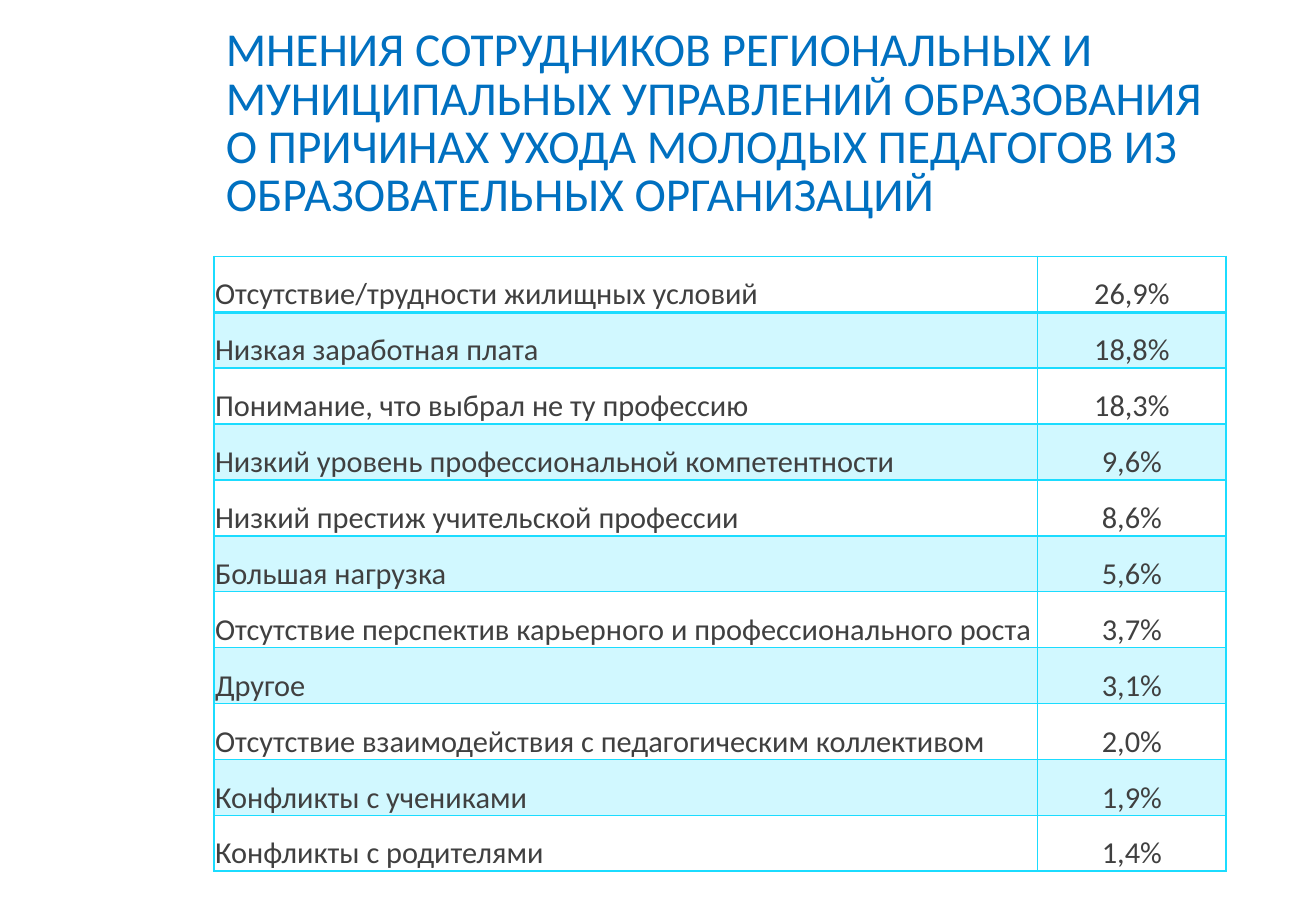
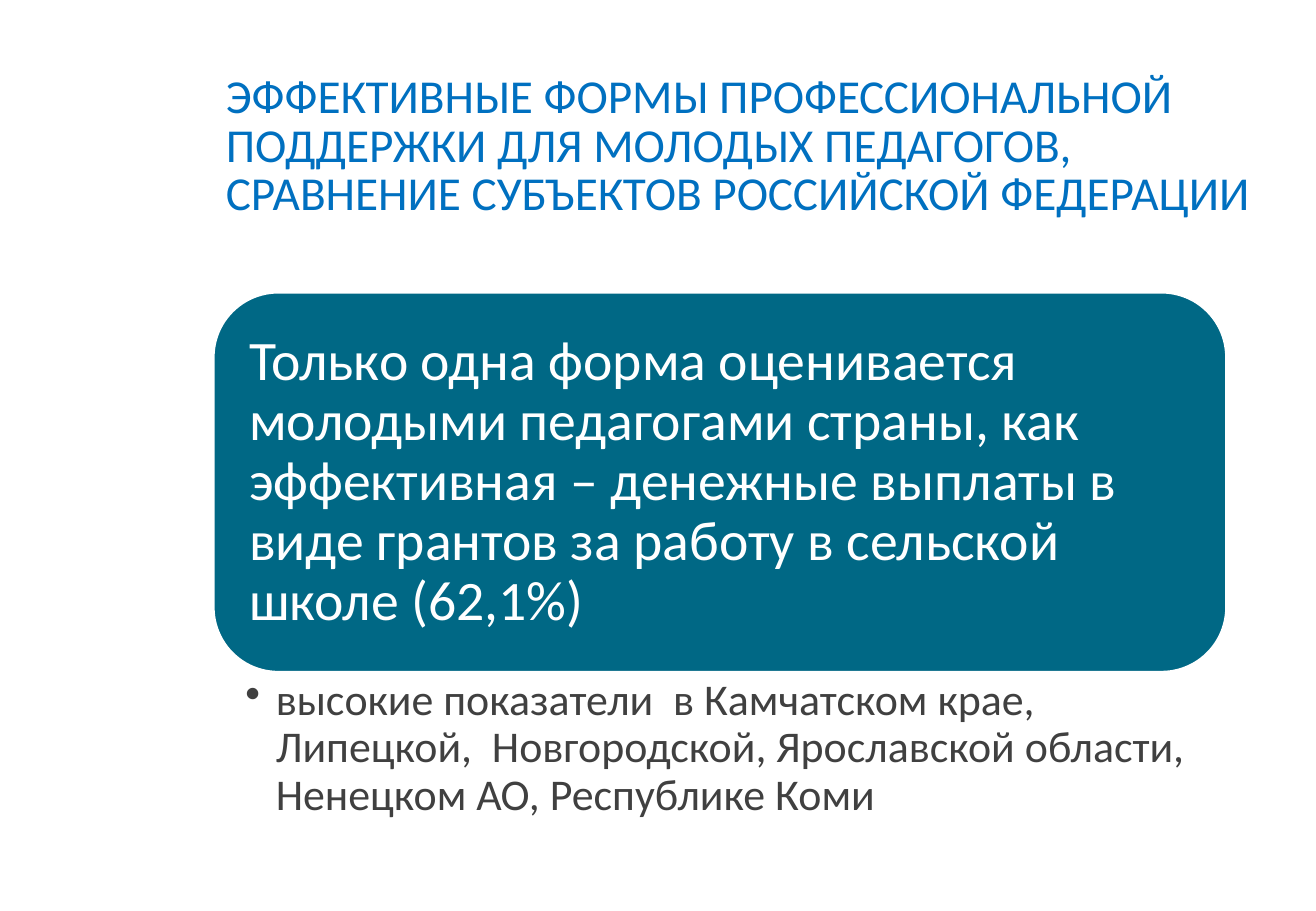
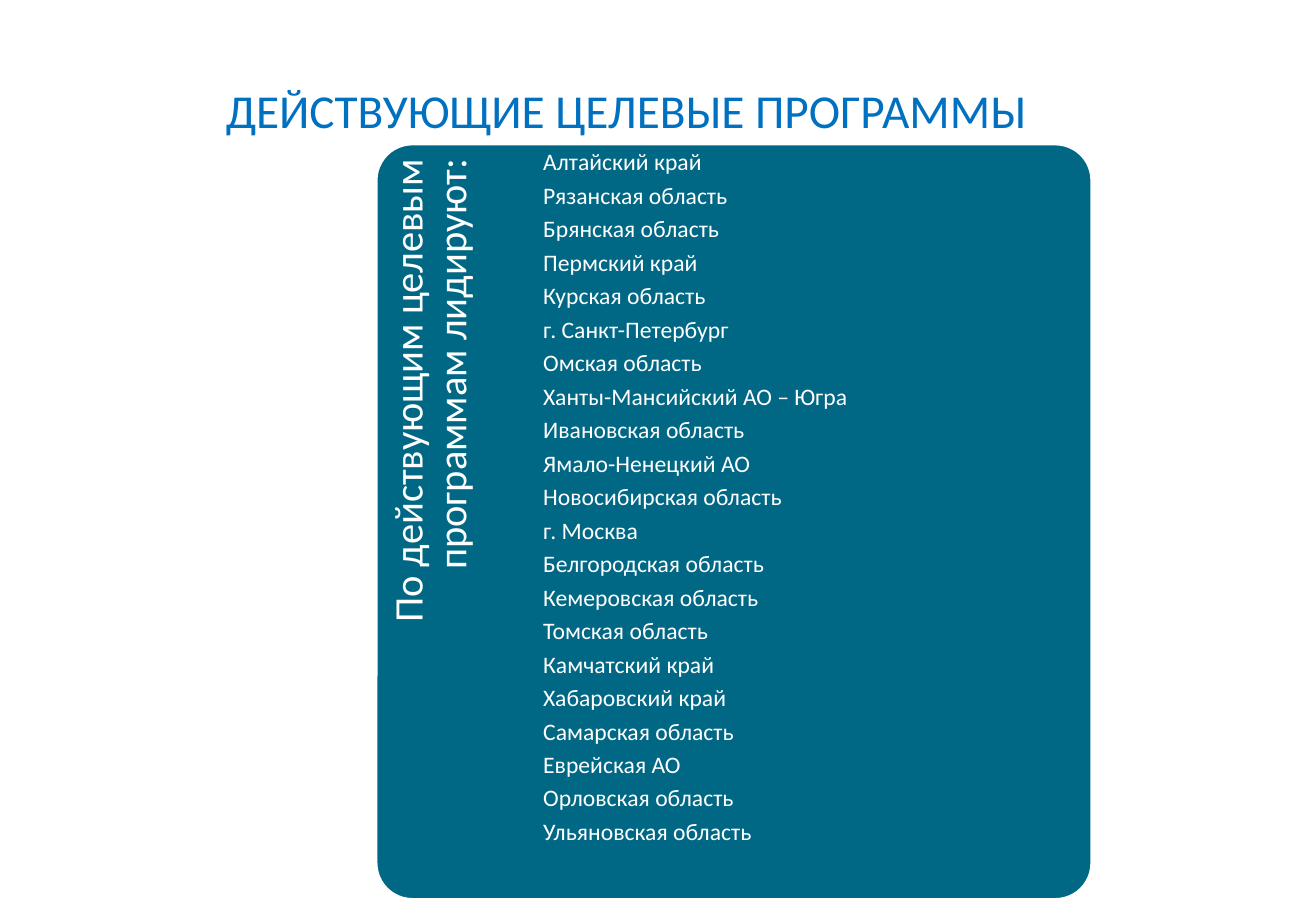
import pptx
import pptx.dml.color
import pptx.enum.shapes
import pptx.enum.text
import pptx.oxml.ns
import pptx.util
from lxml import etree

Inches = pptx.util.Inches
Pt = pptx.util.Pt
ALIGN = pptx.enum.text.PP_ALIGN
ANCHOR = pptx.enum.text.MSO_ANCHOR
qn = pptx.oxml.ns.qn

FONT = "Calibri"
BLUE = "0070C0"
TEAL = "006885"
CYAN = "1BDCFF"
GREY = "404040"
WHITE = "FFFFFF"
LEFT = 1.76
WIDTH = 8.33

REASONS = [
    ("Отсутствие/трудности жилищных условий", "26,9%"),
    ("Низкая заработная плата", "18,8%"),
    ("Понимание, что выбрал не ту профессию", "18,3%"),
    ("Низкий уровень профессиональной компетентности", "9,6%"),
    ("Низкий престиж учительской профессии", "8,6%"),
    ("Большая нагрузка", "5,6%"),
    ("Отсутствие перспектив карьерного и профессионального роста", "3,7%"),
    ("Другое", "3,1%"),
    ("Отсутствие взаимодействия с педагогическим коллективом", "2,0%"),
    ("Конфликты с учениками", "1,9%"),
    ("Конфликты с родителями", "1,4%"),
]

REGIONS = [
    "Алтайский край", "Рязанская область", "Брянская область", "Пермский край",
    "Курская область", "г. Санкт-Петербург", "Омская область",
    "Ханты-Мансийский АО – Югра", "Ивановская область", "Ямало-Ненецкий АО",
    "Новосибирская область", "г. Москва", "Белгородская область",
    "Кемеровская область", "Томская область", "Камчатский край",
    "Хабаровский край", "Самарская область", "Еврейская АО",
    "Орловская область", "Ульяновская область",
]


def color(value):
    return pptx.dml.color.RGBColor.from_string(value)


def place(box):
    return [Inches(length) for length in box]


def write_text(frame, text, size, ink, align=ALIGN.LEFT, spacing=0.9, after=0, bullet=None):
    lines = [text] if isinstance(text, str) else text
    for index, line in enumerate(lines):
        paragraph = frame.paragraphs[0] if index == 0 else frame.add_paragraph()
        paragraph.text = line
        paragraph.alignment = align
        paragraph.line_spacing = spacing
        paragraph.space_after = Pt(after)
        if bullet:
            properties = paragraph._p.get_or_add_pPr()
            properties.set("marL", str(Inches(0.25)))
            properties.set("indent", str(Inches(-0.25)))
            etree.SubElement(properties, qn("a:buChar"), char=bullet)
        for run in paragraph.runs:
            run.font.name = FONT
            run.font.size = Pt(size)
            run.font.color.rgb = color(ink)


def add_text(slide, box, text, insets=(0.1, 0.05, 0.1, 0.05), anchor=ANCHOR.TOP, **text_format):
    shape = slide.shapes.add_textbox(*place(box))
    frame = shape.text_frame
    frame.word_wrap = True
    frame.vertical_anchor = anchor
    (frame.margin_left, frame.margin_top,
     frame.margin_right, frame.margin_bottom) = place(insets)
    write_text(frame, text, **text_format)
    return shape


def add_title(slide, box, text):
    add_text(slide, box, text, anchor=ANCHOR.BOTTOM, size=28, ink=BLUE, spacing=0.85)


def add_panel(slide, box, rounding):
    shape = slide.shapes.add_shape(
        pptx.enum.shapes.MSO_SHAPE.ROUNDED_RECTANGLE, *place(box))
    shape.adjustments[0] = rounding
    shape.shadow.inherit = False
    shape.fill.solid()
    shape.fill.fore_color.rgb = color(TEAL)
    shape.line.color.rgb = color(WHITE)
    shape.line.width = Pt(1)


def set_borders(cell, **widths):
    properties = cell._tc.get_or_add_tcPr()
    for side in "LRTB":
        line = etree.SubElement(
            properties, qn("a:ln" + side), w=str(Pt(widths.get(side, 1))))
        fill = etree.SubElement(line, qn("a:solidFill"))
        etree.SubElement(fill, qn("a:srgbClr"), val=CYAN)


def tint(cell, opacity):
    cell.fill.solid()
    cell.fill.fore_color.rgb = color(CYAN)
    tone = cell._tc.tcPr.find(qn("a:solidFill")).find(qn("a:srgbClr"))
    etree.SubElement(tone, qn("a:alpha"), val=str(opacity * 1000))


def add_reason_table(slide, box, rows):
    value_width = 1.55
    table = slide.shapes.add_table(len(rows), 2, *place(box)).table
    table.first_row = False
    table.horz_banding = False
    table.columns[0].width = Inches(box[2] - value_width)
    table.columns[1].width = Inches(value_width)
    for row_index, row in enumerate(rows):
        for column_index, text in enumerate(row):
            cell = table.cell(row_index, column_index)
            cell.vertical_anchor = ANCHOR.MIDDLE
            cell.margin_left = cell.margin_top = cell.margin_right = Inches(0.01)
            cell.margin_bottom = 0
            write_text(cell.text_frame, text, size=18, ink=GREY, spacing=1.5,
                       align=ALIGN.CENTER if column_index else ALIGN.LEFT)
            set_borders(cell, T=2 if row_index == 1 else 1, B=2 if row_index == 0 else 1)
            if row_index % 2:
                tint(cell, 20)
            else:
                cell.fill.background()


def add_statement(slide, box, statement, detail):
    left, top, width, height = box
    panel_height = 3.12
    pad = 0.15
    add_panel(slide, (left, top, width, panel_height), 0.17)
    add_text(slide, (left + pad, top + pad, width - 2 * pad, panel_height - 2 * pad),
             statement, insets=(0.14,) * 4, anchor=ANCHOR.MIDDLE, size=33, ink=WHITE)
    add_text(slide, (left, top + panel_height, width, height - panel_height), detail,
             insets=(0.26, 0.05, 0.26, 0.05), size=26, ink=GREY, bullet="•")


def add_leader_panel(slide, box, heading, names):
    left, top, width, height = box
    heading_width, heading_length = 1.18, 5.09
    list_offset = 1.37
    add_panel(slide, box, 0.05)
    shift = (heading_length - heading_width) / 2
    label = add_text(
        slide, (left - shift, top + shift, heading_length, heading_width), heading,
        insets=(0, 0.09, 0.12, 0), size=24, ink=WHITE, align=ALIGN.RIGHT)
    label.rotation = 270
    add_text(slide, (left + list_offset, top, width - list_offset - 0.13, height), names,
             insets=(0, 0.05, 0, 0), size=14, ink=WHITE, after=4.7)


def main():
    presentation = pptx.Presentation()
    presentation.slide_width = Inches(10.83)
    presentation.slide_height = Inches(7.5)
    blank = presentation.slide_layouts[6]

    slide = presentation.slides.add_slide(blank)
    add_title(slide, (LEFT, 0.42, WIDTH, 1.45),
              "МНЕНИЯ СОТРУДНИКОВ РЕГИОНАЛЬНЫХ И МУНИЦИПАЛЬНЫХ УПРАВЛЕНИЙ ОБРАЗОВАНИЯ "
              "О ПРИЧИНАХ УХОДА МОЛОДЫХ ПЕДАГОГОВ ИЗ ОБРАЗОВАТЕЛЬНЫХ ОРГАНИЗАЦИЙ")
    add_reason_table(slide, (LEFT, 2.11, WIDTH, 4.97), REASONS)

    slide = presentation.slides.add_slide(blank)
    add_title(slide, (LEFT, 0.34, 8.68, 1.52),
              "ЭФФЕКТИВНЫЕ ФОРМЫ ПРОФЕССИОНАЛЬНОЙ ПОДДЕРЖКИ ДЛЯ МОЛОДЫХ ПЕДАГОГОВ, "
              "СРАВНЕНИЕ СУБЪЕКТОВ РОССИЙСКОЙ ФЕДЕРАЦИИ")
    add_statement(slide, (LEFT, 2.41, WIDTH, 4.43),
                  "Только одна форма оценивается молодыми педагогами страны, как эффективная "
                  "– денежные выплаты в виде грантов за работу в сельской школе (62,1%)",
                  "высокие показатели  в Камчатском крае, Липецкой,  Новгородской, "
                  "Ярославской области,\vНенецком АО, Республике Коми")

    slide = presentation.slides.add_slide(blank)
    add_title(slide, (LEFT, 0.42, WIDTH, 0.77), "ДЕЙСТВУЮЩИЕ ЦЕЛЕВЫЕ ПРОГРАММЫ")
    add_leader_panel(slide, (3.1, 1.19, 5.88, 6.21),
                     "По действующим целевым программам лидируют:", REGIONS)

    presentation.save("out.pptx")


if __name__ == "__main__":
    main()
